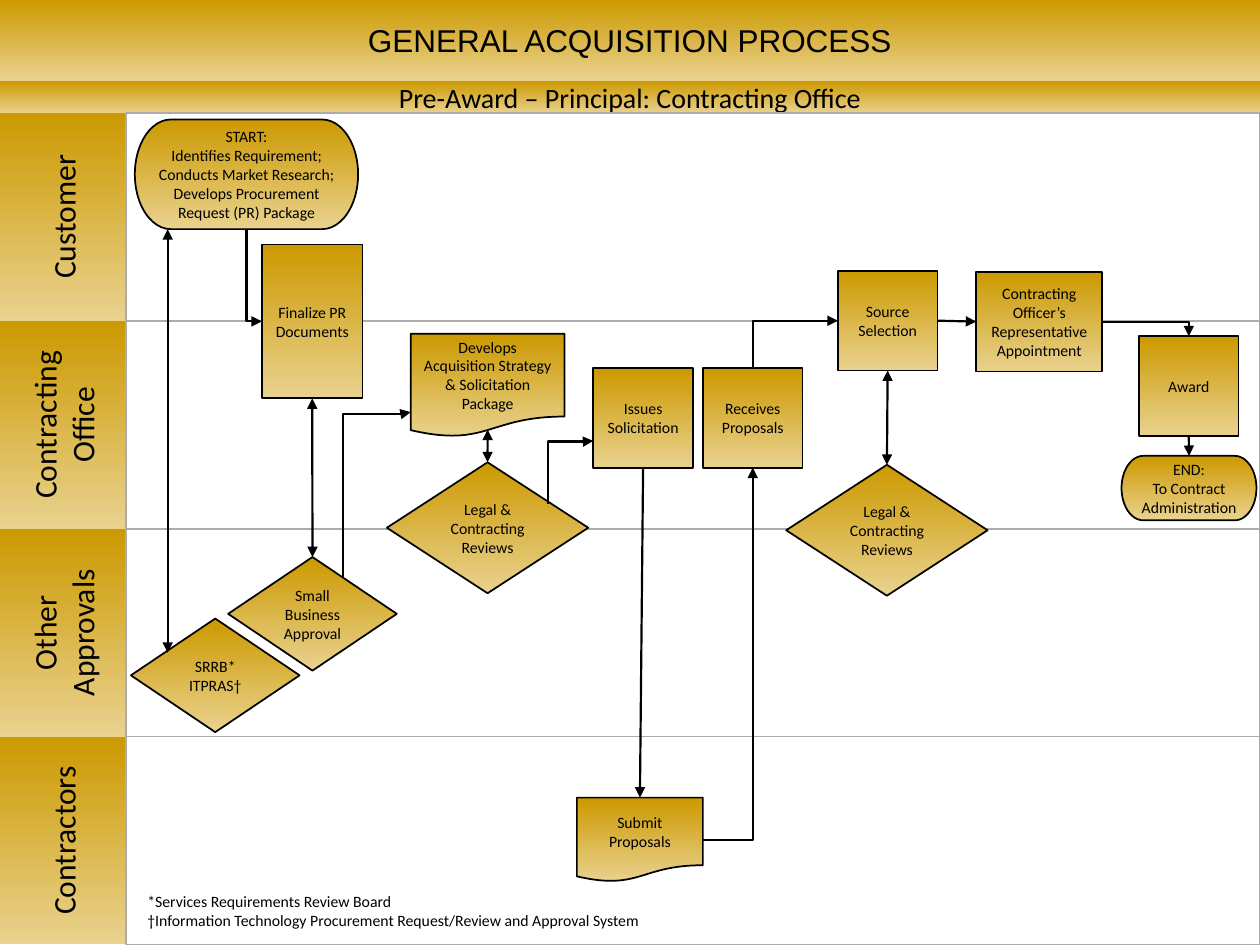
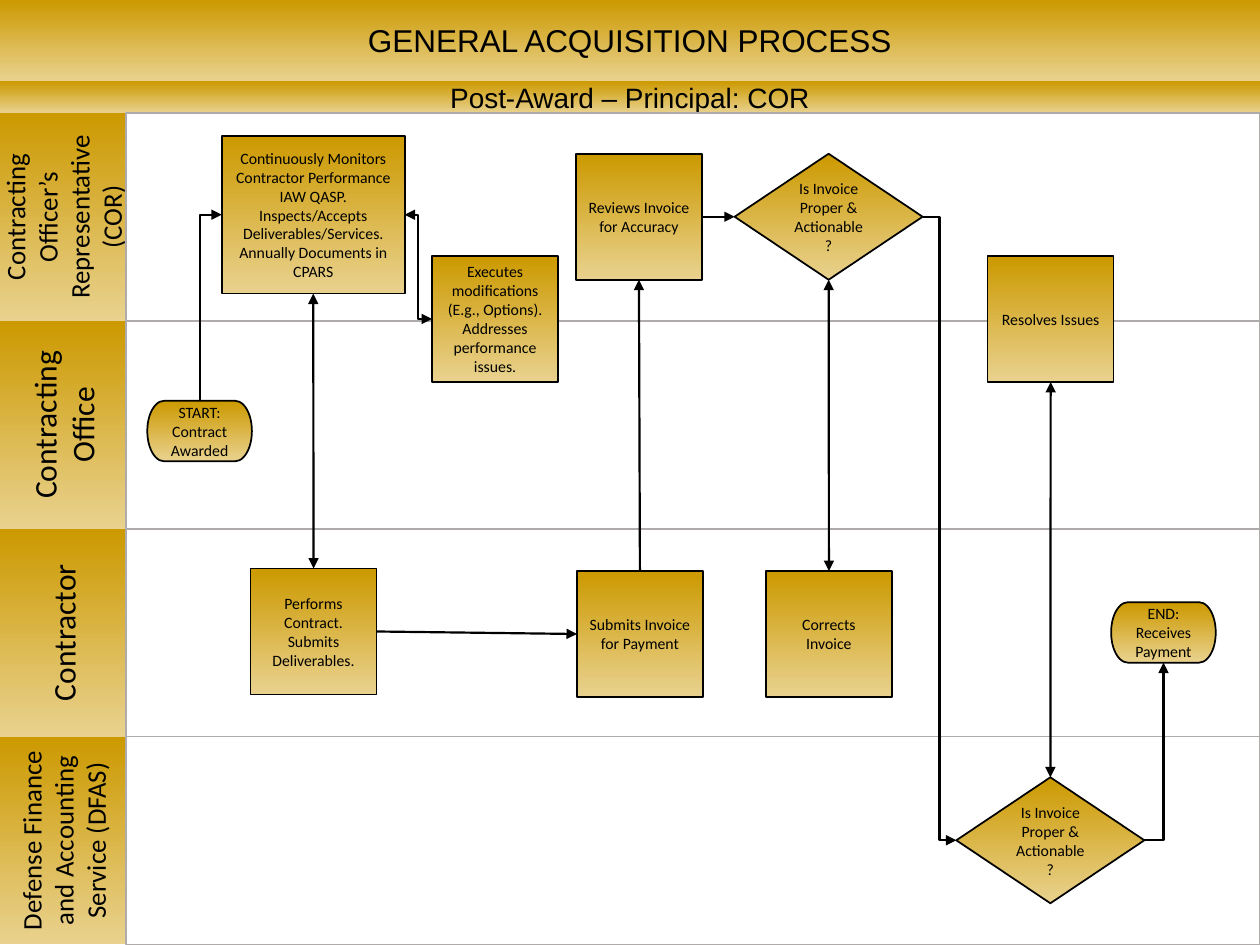
from lxml.etree import SubElement
from pptx import Presentation
from pptx.dml.color import RGBColor
from pptx.enum.shapes import MSO_CONNECTOR, MSO_SHAPE
from pptx.enum.text import MSO_ANCHOR, PP_ALIGN
from pptx.oxml.ns import qn
from pptx.util import Cm, Pt

GOLD = RGBColor(0xCC, 0x99, 0x00)
PALE_GOLD = RGBColor(0xE9, 0xD2, 0x8F)
BLACK = RGBColor(0x00, 0x00, 0x00)
WHITE = RGBColor(0xFF, 0xFF, 0xFF)
LANE_GRAY = RGBColor(0xAF, 0xAB, 0xAB)

BODY_FONT = "Calibri"
TITLE_FONT = "Arial"

SLIDE_WIDTH, SLIDE_HEIGHT = 25.4, 19.05
TITLE_HEIGHT, SUBTITLE_HEIGHT = 1.63, 0.66
LANE_TOP, LANE_HEIGHT, LABEL_WIDTH = 2.28, 4.19, 2.54

SMALL_BOX = (2.01, 2.01)
LARGE_BOX = (2.54, 2.54)
APPROVAL_SIZE = (3.4, 2.29)
REVIEW_SIZE = (4.06, 2.64)
INVOICE_CHECK_SIZE = (3.79, 2.54)
TERMINAL_SIZE = (2.11, 1.22)

TOP, LEFT, BOTTOM, RIGHT = range(4)

PROCESS = MSO_SHAPE.RECTANGLE
DECISION = MSO_SHAPE.FLOWCHART_DECISION
DOCUMENT = MSO_SHAPE.FLOWCHART_DOCUMENT
TERMINAL = MSO_SHAPE.FLOWCHART_TERMINATOR


def write(holder, paragraphs, size, font=BODY_FONT, align=PP_ALIGN.CENTER):
    frame = holder.text_frame
    frame.word_wrap = True
    for index, text in enumerate(paragraphs):
        paragraph = frame.paragraphs[0] if index == 0 else frame.add_paragraph()
        paragraph.alignment = align
        for row, words in enumerate(text.split("\n")):
            if row:
                paragraph.add_line_break()
            run = paragraph.add_run()
            run.text = words
            run.font.name = font
            run.font.size = Pt(size)
            run.font.color.rgb = BLACK


def add_block(slide, kind, position, size, outline=None):
    block = slide.shapes.add_shape(kind, *map(Cm, position + size))
    block.shadow.inherit = False
    block.text_frame.vertical_anchor = MSO_ANCHOR.MIDDLE
    if outline is None:
        block.line.fill.background()
    else:
        block.line.color.rgb = outline
        block.line.width = Pt(1)
    return block


def add_gold(slide, kind, position, size, outline=None):
    block = add_block(slide, kind, position, size, outline)
    block.fill.gradient()
    block.fill.gradient_angle = 270
    for stop, color in zip(block.fill.gradient_stops, (GOLD, PALE_GOLD)):
        stop.color.rgb = color
    return block


def add_step(slide, kind, position, size, *paragraphs):
    step = add_gold(slide, kind, position, size, BLACK)
    write(step, paragraphs, 9)
    return step


def add_band(slide, top, height, text, size, font):
    band = add_gold(slide, PROCESS, (0, top), (SLIDE_WIDTH, height))
    write(band, [text], size, font)


def add_lanes(slide, labels):
    for index, (text, size) in enumerate(labels):
        top = LANE_TOP + index * LANE_HEIGHT
        label = add_gold(slide, PROCESS, (0, top), (LABEL_WIDTH, LANE_HEIGHT))
        label.element.find(".//" + qn("a:bodyPr")).set("vert", "vert270")
        write(label, [text], size)
        lane = add_block(slide, PROCESS, (LABEL_WIDTH, top),
                         (SLIDE_WIDTH - LABEL_WIDTH, LANE_HEIGHT), LANE_GRAY)
        lane.fill.solid()
        lane.fill.fore_color.rgb = WHITE


def add_process_slide(deck, subtitle, subtitle_font, lane_labels):
    slide = deck.slides.add_slide(deck.slide_layouts[6])
    add_band(slide, 0, TITLE_HEIGHT, "GENERAL ACQUISITION PROCESS", 18, TITLE_FONT)
    add_band(slide, TITLE_HEIGHT, SUBTITLE_HEIGHT, subtitle, 16, subtitle_font)
    add_lanes(slide, lane_labels)
    return slide


def is_joined(end):
    return not isinstance(end[0], (int, float))


def add_arrow(slide, start, end, both_ways=False, route=MSO_CONNECTOR.STRAIGHT):
    corners = [(0, 0) if is_joined(spot) else tuple(map(Cm, spot))
               for spot in (start, end)]
    arrow = slide.shapes.add_connector(route, *corners[0], *corners[1])
    if is_joined(start):
        arrow.begin_connect(*start)
    if is_joined(end):
        arrow.end_connect(*end)
    arrow.line.color.rgb = BLACK
    arrow.line.width = Pt(1.25)
    properties = arrow.element.spPr
    outline = properties.find(qn("a:ln"))
    if both_ways:
        SubElement(outline, qn("a:headEnd"), type="triangle")
    SubElement(outline, qn("a:tailEnd"), type="triangle")
    SubElement(properties, qn("a:effectLst"))
    return arrow


def turn_upright(arrow):
    across = arrow.end_x - arrow.begin_x
    down = arrow.end_y - arrow.begin_y
    middle_x = (arrow.begin_x + arrow.end_x) // 2
    middle_y = (arrow.begin_y + arrow.end_y) // 2
    arrow.width, arrow.height = abs(down), abs(across)
    arrow.left = middle_x - abs(down) // 2
    arrow.top = middle_y - abs(across) // 2
    frame = arrow.element.spPr.find(qn("a:xfrm"))
    frame.set("rot", "5400000")
    frame.set("flipH", str(int(down < 0)))
    frame.set("flipV", str(int(across > 0)))


def add_elbow(slide, start, end, upright=False, bend=None, both_ways=False):
    arrow = add_arrow(slide, start, end, both_ways, MSO_CONNECTOR.ELBOW)
    geometry = arrow.element.spPr.find(qn("a:prstGeom"))
    if bend is None:
        geometry.set("prst", "bentConnector2")
    else:
        guides = geometry.find(qn("a:avLst"))
        if guides is None:
            guides = SubElement(geometry, qn("a:avLst"))
        SubElement(guides, qn("a:gd"), name="adj1", fmla=f"val {round(bend * 100000)}")
    if upright:
        turn_upright(arrow)


def add_footnotes(slide, *notes):
    box = slide.shapes.add_textbox(Cm(2.72), Cm(17.86), Cm(12.45), Cm(1.02))
    write(box, notes, 9, align=PP_ALIGN.LEFT)


def build_pre_award(deck):
    slide = add_process_slide(
        deck, "Pre-Award – Principal: Contracting Office", BODY_FONT,
        [("Customer", 18), ("Contracting Office", 18),
         ("Other Approvals", 18), ("Contractors", 18)])

    requirement = add_step(
        slide, TERMINAL, (2.72, 2.41), (4.5, 2.21), "START:",
        "Identifies Requirement; Conducts Market Research; "
        "Develops Procurement Request (PR) Package")
    add_step(slide, DOCUMENT, (8.28, 6.73), (3.1, 2.08),
             "Develops Acquisition Strategy & Solicitation Package")
    solicitation = add_step(slide, PROCESS, (11.96, 7.42), SMALL_BOX, "Issues Solicitation")
    receipt = add_step(slide, PROCESS, (14.17, 7.42), SMALL_BOX, "Receives Proposals")
    award = add_step(slide, PROCESS, (22.96, 6.78), SMALL_BOX, "Award")
    selection = add_step(slide, PROCESS, (16.89, 5.46), SMALL_BOX, "Source Selection")
    final_request = add_step(slide, PROCESS, (5.28, 4.93), (2.03, 3.1),
                             "Finalize PR Documents")
    small_business = add_step(slide, DECISION, (4.6, 11.23), APPROVAL_SIZE,
                              "Small Business Approval")
    proposals = add_step(slide, DOCUMENT, (11.63, 16.08), (2.54, 1.7), "Submit Proposals")
    strategy_review, selection_review = [
        add_step(slide, DECISION, position, REVIEW_SIZE, "Legal & Contracting Reviews")
        for position in ((7.8, 9.32), (15.85, 9.37))]
    administration = add_step(slide, TERMINAL, (22.61, 9.19), (2.72, 1.3),
                              "END:", "To Contract Administration")
    add_step(slide, DECISION, (2.64, 12.47), APPROVAL_SIZE, "SRRB*", "ITPRAS†")
    appointment = add_step(slide, PROCESS, (19.68, 5.48), (2.54, 2.01),
                           "Contracting Officer’s Representative Appointment")

    add_elbow(slide, (requirement, BOTTOM), (final_request, LEFT), upright=True)
    add_elbow(slide, (6.91, 11.63), (8.28, 8.31), upright=True, bend=0.99)
    add_elbow(slide, (11.05, 10.16), (11.96, 8.89), upright=True, bend=0.99)
    add_elbow(slide, (proposals, RIGHT), (receipt, BOTTOM))
    add_elbow(slide, (receipt, TOP), (selection, LEFT), upright=True)
    add_elbow(slide, (appointment, RIGHT), (award, TOP))

    add_arrow(slide, (3.38, 4.62), (3.38, 13.16), both_ways=True)
    add_arrow(slide, (final_request, BOTTOM), (small_business, TOP), both_ways=True)
    add_arrow(slide, (9.83, 8.66), (strategy_review, TOP), both_ways=True)
    add_arrow(slide, (selection, BOTTOM), (selection_review, TOP), both_ways=True)
    add_arrow(slide, (solicitation, BOTTOM), (proposals, TOP))
    add_arrow(slide, (selection, RIGHT), (appointment, LEFT))
    add_arrow(slide, (award, BOTTOM), (administration, TOP))

    add_footnotes(
        slide, "*Services Requirements Review Board",
        "†Information Technology Procurement Request/Review and Approval System")


def build_post_award(deck):
    slide = add_process_slide(
        deck, "Post-Award – Principal: COR", TITLE_FONT,
        [("Contracting Officer’s Representative (COR)", 15.3),
         ("Contracting Office", 18), ("Contractor", 18),
         ("Defense Finance and Accounting Service (DFAS)", 15.3)])

    contract = add_step(slide, TERMINAL, (2.97, 8.08), TERMINAL_SIZE,
                        "START:", "Contract Awarded")
    cor_check, dfas_check = [
        add_step(slide, DECISION, position, INVOICE_CHECK_SIZE,
                 "Is Invoice Proper & Actionable?")
        for position in ((14.81, 3.1), (19.28, 15.67))]
    monitoring = add_step(
        slide, PROCESS, (4.47, 2.74), (3.69, 3.18),
        "Continuously Monitors Contractor Performance IAW QASP. "
        "Inspects/Accepts Deliverables/Services.",
        "Annually Documents in CPARS")
    performance, submission, accuracy, correction, resolution, modification = [
        add_step(slide, PROCESS, position, LARGE_BOX, text)
        for position, text in (
            ((5.05, 11.46), "Performs Contract. Submits Deliverables."),
            ((11.63, 11.51), "Submits Invoice for Payment"),
            ((11.61, 3.1), "Reviews Invoice for Accuracy"),
            ((15.44, 11.51), "Corrects Invoice"),
            ((19.91, 5.16), "Resolves Issues"),
            ((8.71, 5.16), "Executes modifications\n(E.g., Options).\n"
                           "Addresses performance issues."))]
    payment = add_step(slide, TERMINAL, (22.4, 12.14), TERMINAL_SIZE,
                       "END: Receives Payment")

    add_elbow(slide, (contract, TOP), (monitoring, LEFT), upright=True)
    add_elbow(slide, (cor_check, RIGHT), (dfas_check, LEFT), bend=0.5)
    add_elbow(slide, (dfas_check, RIGHT), (payment, BOTTOM))
    add_elbow(slide, (monitoring, RIGHT), (modification, LEFT), bend=0.5, both_ways=True)

    add_arrow(slide, (monitoring, BOTTOM), (performance, TOP), both_ways=True)
    add_arrow(slide, (performance, RIGHT), (submission, LEFT))
    add_arrow(slide, (submission, TOP), (accuracy, BOTTOM))
    add_arrow(slide, (accuracy, RIGHT), (cor_check, LEFT))
    add_arrow(slide, (cor_check, BOTTOM), (correction, TOP), both_ways=True)
    add_arrow(slide, (resolution, BOTTOM), (dfas_check, TOP), both_ways=True)


def main():
    deck = Presentation()
    deck.slide_width, deck.slide_height = Cm(SLIDE_WIDTH), Cm(SLIDE_HEIGHT)
    build_pre_award(deck)
    build_post_award(deck)
    deck.save("out.pptx")


if __name__ == "__main__":
    main()
